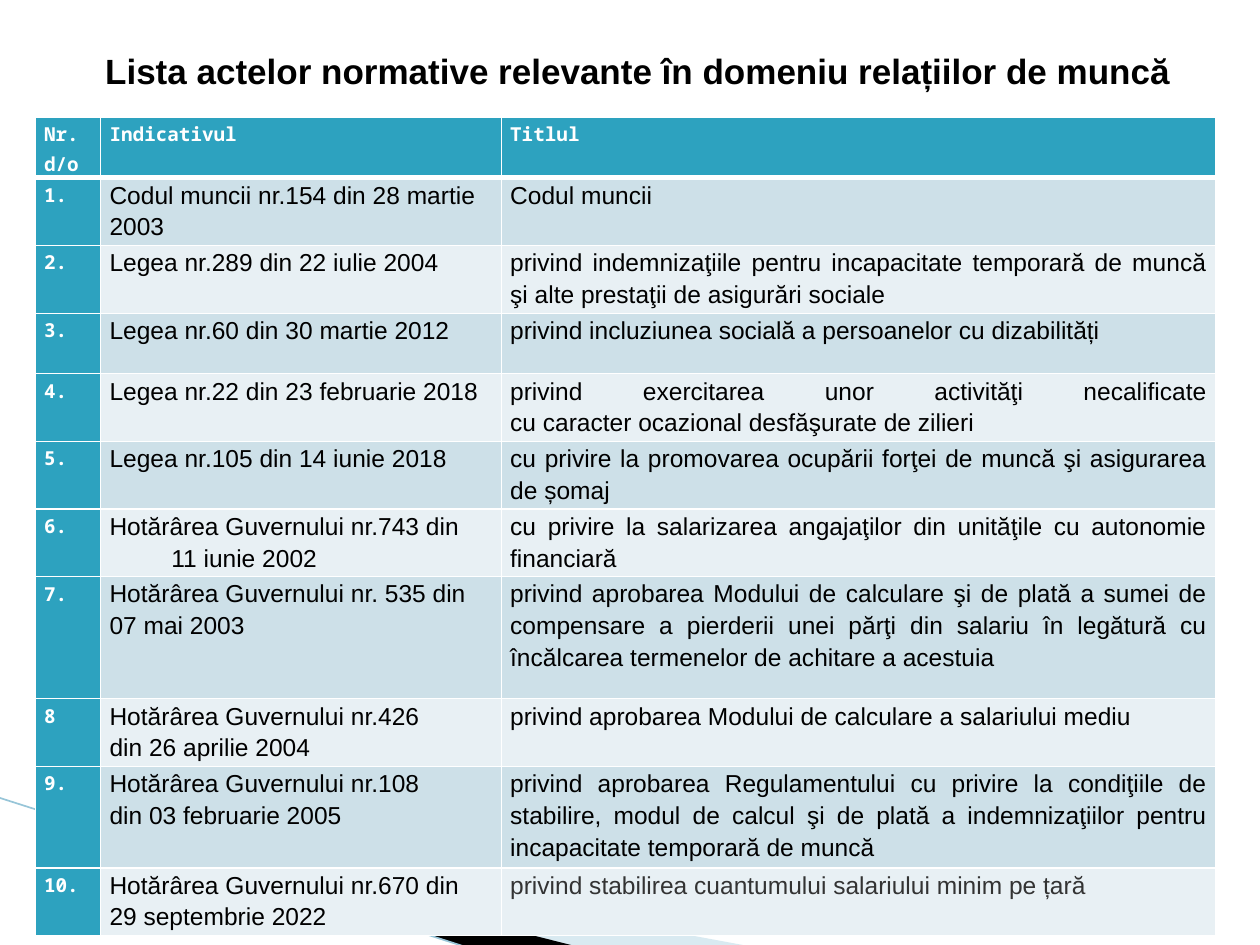
"""Build the slide listing the normative acts on labour relations."""
from lxml.etree import SubElement
from pptx import Presentation
from pptx.dml.color import RGBColor
from pptx.enum.shapes import MSO_CONNECTOR as Connector
from pptx.enum.text import PP_ALIGN as Align
from pptx.oxml.ns import qn
from pptx.util import Inches, Pt

TEAL, WHITE, BLACK = "2DA2BF", "FFFFFF", "000000"
BANDS = "E8F0F4", "CDE0E8"
COLUMNS = 0.52, 3.18, 5.67
ROWS = 0.48, 0.52, 0.54, 0.48, 0.52, 0.52, 0.52, 0.97, 0.52, 0.8, 0.52
EDGES = {"a:lnL": 1, "a:lnR": 1, "a:lnT": 1, "a:lnB": 1}
ACTS = [
    ("Nr. d/o", "Indicativul", "Titlul"),
    ("1.", "Codul muncii nr.154 din 28 martie 2003", "Codul muncii"),
    ("2.", "Legea nr.289 din 22 iulie 2004",
     "privind indemnizaţiile pentru incapacitate temporară de muncă "
     "şi alte prestaţii de asigurări sociale"),
    ("3.", "Legea nr.60 din 30 martie 2012",
     "privind incluziunea socială a persoanelor cu dizabilități"),
    ("4.", "Legea nr.22 din 23 februarie 2018",
     "privind exercitarea unor activităţi necalificate\v"
     "cu caracter ocazional desfăşurate de zilieri"),
    ("5.", "Legea nr.105 din 14 iunie 2018",
     "cu privire la promovarea ocupării forţei de muncă şi asigurarea de șomaj"),
    ("6.", "Hotărârea Guvernului nr.743 din",
     "cu privire la salarizarea angajaţilor din unităţile cu autonomie financiară"),
    ("7.", "Hotărârea Guvernului nr. 535 din 07 mai 2003",
     "privind aprobarea Modului de calculare şi de plată a sumei de "
     "compensare a pierderii unei părţi din salariu în legătură cu "
     "încălcarea termenelor de achitare a acestuia"),
    ("8", "Hotărârea Guvernului nr.426\vdin 26 aprilie 2004",
     "privind aprobarea Modului de calculare a salariului mediu"),
    ("9.", "Hotărârea Guvernului nr.108\vdin 03 februarie 2005",
     "privind aprobarea Regulamentului cu privire la condiţiile de "
     "stabilire, modul de calcul şi de plată a indemnizaţiilor pentru "
     "incapacitate temporară de muncă"),
    ("10.", "Hotărârea Guvernului nr.670 din\v29 septembrie 2022",
     "privind stabilirea cuantumului salariului minim pe țară"),
]


def paint(fill, color):
    fill.solid()
    fill.fore_color.rgb = RGBColor.from_string(color)


def write(para, text, size=14, font="Arial", color=BLACK, bold=False,
          align=Align.LEFT, indent=0):
    para.text = text
    para.alignment = align
    para.line_spacing = 1.15
    if indent:
        para._p.get_or_add_pPr().set("marL", str(Inches(indent)))
    for span in para.runs:
        span.font.size, span.font.name, span.font.bold = Pt(size), font, bold
        span.font.color.rgb = RGBColor.from_string(color)


deck = Presentation()
deck.slide_width, deck.slide_height = Inches(10), Inches(7.5)
page = deck.slides.add_slide(deck.slide_layouts[6])

WEDGES = [
    ("A0CBDC", 40, [(0.55, 6.51), (5.95, 7.51), (4.56, 7.51), (0.55, 6.5)]),
    (BLACK, 100, [(0.53, 6.49), (4.57, 7.51), (3.72, 7.52), (0.54, 6.5)]),
]
for color, opacity, points in WEDGES:
    start, *others = [(Inches(x), Inches(y)) for x, y in points]
    builder = page.shapes.build_freeform(*start)
    builder.add_line_segments(others)
    wedge = builder.convert_to_shape()
    wedge.shadow.inherit = False
    wedge.line.fill.background()
    paint(wedge.fill, color)
    if opacity < 100:
        tint = wedge._element.spPr.find(f".//{qn('a:srgbClr')}")
        SubElement(tint, qn("a:alpha"), val=str(opacity * 1000))

edge = page.shapes.add_connector(
    Connector.STRAIGHT, Inches(-0.01), Inches(6.33), Inches(3.71), Inches(7.52))
paint(edge.line.fill, "97C5D8")
edge.line.width = Pt(0.95)
SubElement(edge._element.spPr, qn("a:effectLst"))

title = page.shapes.add_textbox(Inches(0.51), Inches(0.29), Inches(8.99), Inches(0.5))
title.text_frame.word_wrap = True
write(title.text_frame.paragraphs[0],
      "Lista actelor normative relevante în domeniu relațiilor de muncă",
      size=20, bold=True, align=Align.CENTER, indent=0.12)

table = page.shapes.add_table(
    len(ROWS), len(COLUMNS), Inches(0.28), Inches(0.93),
    Inches(sum(COLUMNS)), Inches(sum(ROWS))).table
for column, width in zip(table.columns, COLUMNS):
    column.width = Inches(width)
for row, height in zip(table.rows, ROWS):
    row.height = Inches(height)

for r, act in enumerate(ACTS):
    for c, text in enumerate(act):
        cell = table.cell(r, c)
        cell.margin_left = cell.margin_right = Inches(0.07)
        cell.margin_top = cell.margin_bottom = 0
        heading = r == 0 or c == 0
        if heading:
            style = {"size": 11, "font": "Noto Sans Mono", "color": WHITE, "bold": True}
        else:
            style = {"color": "333333" if (r, c) == (10, 2) else BLACK}
        align = Align.LEFT if r and c == 1 else Align.JUSTIFY
        write(cell.text_frame.paragraphs[0], text, align=align, **style)
        widths = EDGES | ({"a:lnB": 3} if r == 0 else {"a:lnT": 3} if r == 1 else {})
        for side, points in widths.items():
            border = SubElement(cell._tc.get_or_add_tcPr(), qn(side), w=str(Pt(points)))
            SubElement(SubElement(border, qn("a:solidFill")), qn("a:srgbClr"), val=WHITE)
        paint(cell.fill, TEAL if heading else BANDS[r % 2])

write(table.cell(6, 1).text_frame.add_paragraph(), "11 iunie 2002", indent=0.49)

deck.save("out.pptx")
